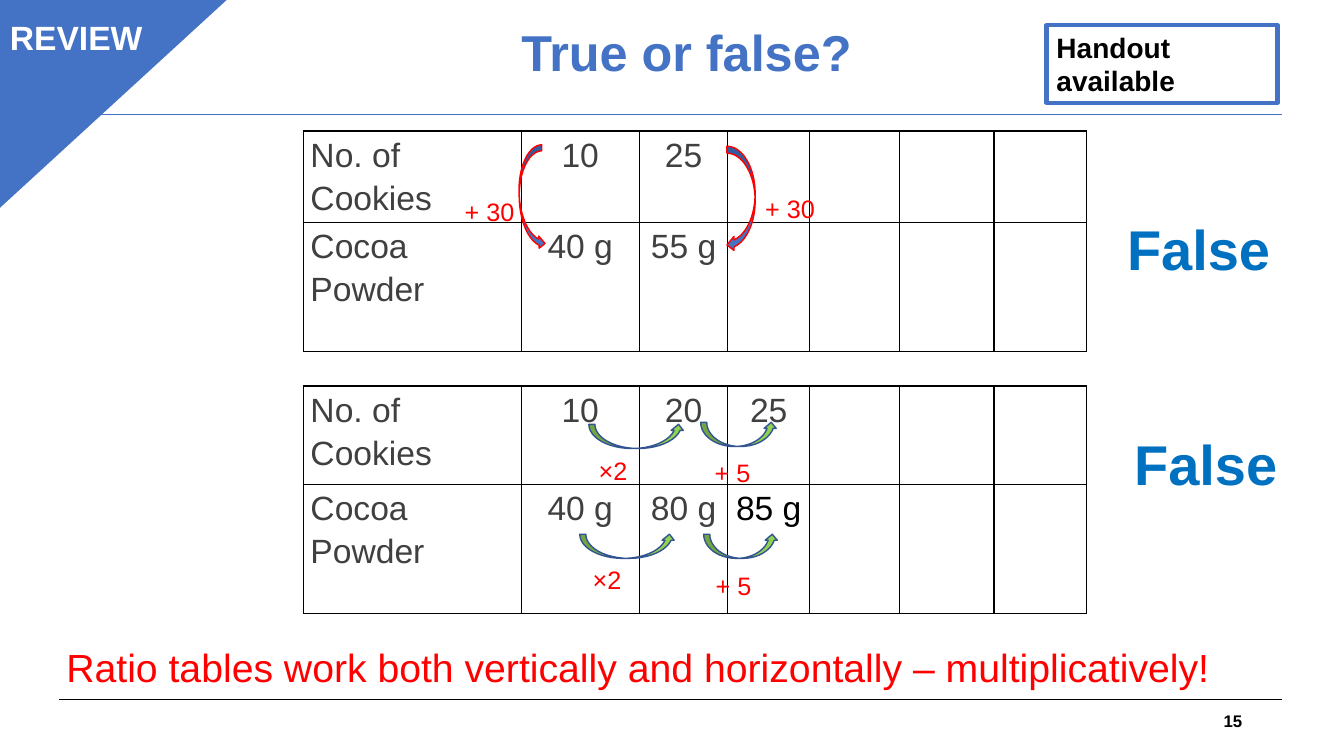
from dataclasses import dataclass

from lxml import etree
from pptx import Presentation
from pptx.dml.color import RGBColor
from pptx.enum.shapes import MSO_CONNECTOR as Connector, MSO_SHAPE as Shape
from pptx.enum.text import MSO_ANCHOR as Anchor, MSO_AUTO_SIZE as AutoSize, PP_ALIGN as Align
from pptx.oxml import parse_xml
from pptx.oxml.ns import nsdecls, qn
from pptx.util import Inches, Pt

BLUE, RED, BLACK, GREY = "4472C4", "FF0000", "000000", "404040"
GREEN, NAVY, ANSWER_BLUE = "92D050", "325491", "0070C0"
COLUMNS = (2.16, 1.17, 0.88, 0.81, 0.89, 0.94, 0.92)
TABLE_LEFT = 3.01


@dataclass
class RatioTable:
    top: float
    heights: tuple[float, float]
    cookies: tuple[str, ...]
    cocoa: tuple[str, ...]


@dataclass
class Arrow:
    kind: Shape
    place: tuple[float, float, float, float]
    fill: str = GREEN
    line: str = NAVY
    rotation: float = 0


@dataclass
class Label:
    text: str
    place: tuple[float, float, float, float]
    size: int = 18
    color: str = RED
    bold: bool = False
    align: Align = Align.LEFT
    anchor: Anchor = Anchor.TOP


TABLES = (
    RatioTable(1.3, (0.91, 1.28), ("10", "25"), ("40 g", "55 g")),
    RatioTable(3.83, (0.98, 1.28), ("10", "20", "25"), ("40 g", "80 g", "85 g")),
)

ARROWS = (
    Arrow(Shape.CURVED_UP_ARROW, (5.84, 4.21, 0.95, 0.24)),
    Arrow(Shape.CURVED_UP_ARROW, (5.75, 5.3, 0.95, 0.24)),
    Arrow(Shape.CURVED_UP_ARROW, (6.95, 4.19, 0.76, 0.24)),
    Arrow(Shape.CURVED_UP_ARROW, (6.98, 5.3, 0.74, 0.24)),
    Arrow(Shape.CURVED_UP_ARROW, (4.75, 1.84, 1.04, 0.24), BLUE, RED, 88),
    Arrow(Shape.CURVED_LEFT_ARROW, (7.21, 1.45, 0.28, 1.05), BLUE, RED),
)

LABELS = (
    Label("15", (9.42, 6.95, 3, 0.4), 12, BLACK, True, Align.RIGHT, Anchor.MIDDLE),
    Label("REVIEW", (0, 0.12, 4.71, 0.5), 24, "FFFFFF", True),
    Label("Ratio tables work both vertically and horizontally – multiplicatively!",
          (0.56, 6.33, 12.15, 0.57), 28),
    Label("False", (11.08, 2.08, 1.87, 0.77), 40, ANSWER_BLUE, True),
    Label("False", (11.15, 4.21, 1.74, 0.77), 40, ANSWER_BLUE, True),
    Label("+ 30", (4.51, 1.9, 0.72, 0.4)),
    Label("+ 30", (7.49, 1.87, 0.72, 0.4)),
    Label("×2", (5.84, 4.47, 0.87, 0.4)),
    Label("×2", (5.78, 5.55, 0.87, 0.4)),
    Label("+ 5", (6.99, 4.49, 0.76, 0.4)),
    Label("+ 5", (7, 5.61, 0.87, 0.4)),
)


def rgb(color: str) -> RGBColor:
    return RGBColor.from_string(color)


def inches(place: tuple[float, ...]) -> list[Inches]:
    return [Inches(length) for length in place]


def write(frame, text: str, *, size: int, color: str, bold: bool = False,
          align: Align = Align.LEFT, anchor: Anchor = Anchor.TOP,
          line_spacing: float = 1.0, gap: float = 0) -> None:
    """Fill a text frame with one formatted paragraph."""
    frame.word_wrap = True
    frame.vertical_anchor = anchor
    para = frame.paragraphs[0]
    para.text = text
    para.alignment = align
    para.line_spacing = line_spacing
    para.space_before = para.space_after = Pt(gap)
    for span in para.runs:
        span.font.name = "Arial"
        span.font.size = Pt(size)
        span.font.bold = bold
        span.font.color.rgb = rgb(color)


def add_rule(page, top: float, color: str) -> None:
    rule = page.shapes.add_connector(Connector.STRAIGHT, *inches((0.59, top, 12.72, top)))
    rule.line.color.rgb = rgb(color)
    rule.line.width = Pt(0.75)
    etree.SubElement(rule.element.spPr, qn("a:effectLst"))


def add_figure(page, kind: Shape, place: tuple[float, ...], fill: str | None,
               line: str, width: float = 1):
    figure = page.shapes.add_shape(kind, *inches(place))
    figure.shadow.inherit = False
    if fill:
        figure.fill.solid()
        figure.fill.fore_color.rgb = rgb(fill)
    else:
        figure.fill.background()
    figure.line.color.rgb = rgb(line)
    figure.line.width = Pt(width)
    return figure


def add_label(page, label: Label) -> None:
    box = page.shapes.add_textbox(*inches(label.place))
    write(box.text_frame, label.text, size=label.size, color=label.color,
          bold=label.bold, align=label.align, anchor=label.anchor)


def style_cell(cell) -> None:
    cell.margin_left = cell.margin_right = Inches(0.07)
    cell.margin_top = cell.margin_bottom = 0
    cell.fill.background()
    properties = cell._tc.get_or_add_tcPr()
    for index, side in enumerate(("lnL", "lnR", "lnT", "lnB")):
        properties.insert(index, parse_xml(
            f'<a:{side} {nsdecls("a")} w="12700"><a:solidFill>'
            f'<a:srgbClr val="{BLACK}"/></a:solidFill></a:{side}>'))


def add_ratio_table(page, ratio: RatioTable) -> None:
    place = (TABLE_LEFT, ratio.top, sum(COLUMNS), sum(ratio.heights))
    table = page.shapes.add_table(2, len(COLUMNS), *inches(place)).table
    table.first_row = table.horz_banding = False
    for column, width in zip(table.columns, COLUMNS):
        column.width = Inches(width)
    rows = (("No. of Cookies", *ratio.cookies), ("Cocoa Powder", *ratio.cocoa))
    for row, height, texts in zip(table.rows, ratio.heights, rows):
        row.height = Inches(height)
        for cell in row.cells:
            style_cell(cell)
        for index, (cell, text) in enumerate(zip(row.cells, texts)):
            write(cell.text_frame, text, size=24,
                  color=BLACK if text == "85 g" else GREY,
                  align=Align.CENTER if index else Align.LEFT,
                  line_spacing=1.15, gap=4)


def main() -> None:
    deck = Presentation()
    deck.slide_width, deck.slide_height = Inches(13.33), Inches(7.5)
    page = deck.slides.add_slide(deck.slide_layouts[5])

    # Rules and corner
    add_rule(page, 6.94, BLACK)
    add_rule(page, 1.14, BLUE)
    corner = add_figure(page, Shape.ISOSCELES_TRIANGLE, (-0.03, -0.02, 2.29, 2.1), BLUE, BLUE)
    corner.adjustments[0] = 0
    corner.element.spPr.find(qn("a:xfrm")).set("flipV", "1")

    # Title
    title = page.shapes.title
    title.left, title.top, title.width, title.height = inches((5.07, -0.02, 4.34, 1.13))
    title.text_frame.auto_size = AutoSize.NONE
    write(title.text_frame, "True or false?", size=36, color=BLUE, bold=True,
          anchor=Anchor.MIDDLE, line_spacing=0.9)

    # Ratio tables with their arrows and labels
    for ratio in TABLES:
        add_ratio_table(page, ratio)
    for arrow in ARROWS:
        figure = add_figure(page, arrow.kind, arrow.place, arrow.fill, arrow.line)
        figure.rotation = arrow.rotation
    for label in LABELS:
        add_label(page, label)

    # Handout note
    note = add_figure(page, Shape.RECTANGLE, (10.38, 0.25, 2.29, 0.77), None, BLUE, 3)
    write(note.text_frame, "Handout\vavailable", size=20, color=BLACK, bold=True)

    deck.save("out.pptx")


if __name__ == "__main__":
    main()
